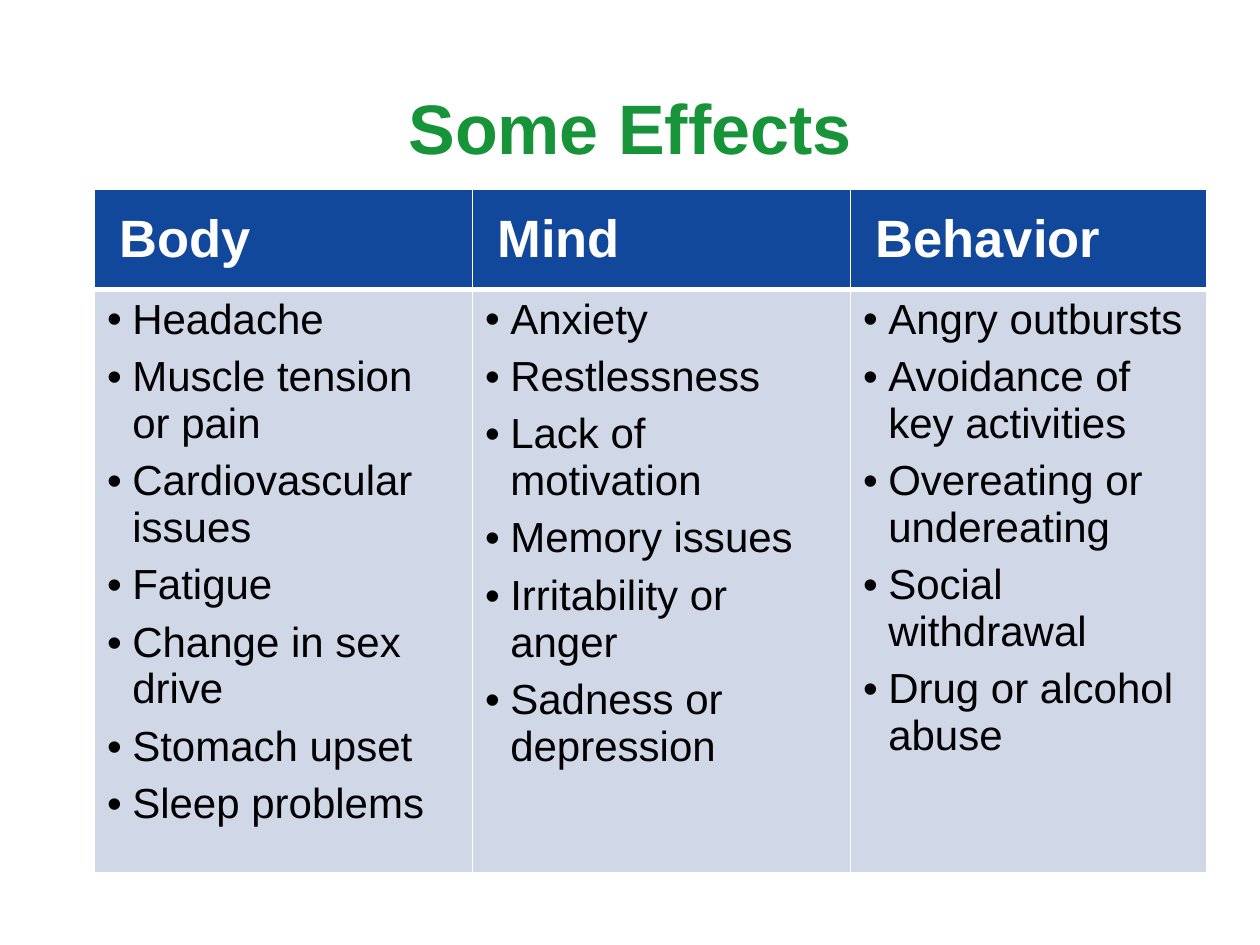
from lxml import etree
from pptx import Presentation, util as u
from pptx.dml.color import RGBColor
from pptx.enum import text
from pptx.oxml.ns import qn

GREEN = RGBColor(0x17, 0x93, 0x39)
BLUE = RGBColor(0x11, 0x48, 0x9B)
PALE = RGBColor(0xD0, 0xD8, 0xE8)
WHITE = RGBColor(0xFF, 0xFF, 0xFF)
BLACK = RGBColor(0, 0, 0)

EFFECTS = {
    "Body": ["Headache", "Muscle tension or pain", "Cardiovascular issues", "Fatigue",
             "Change in sex drive", "Stomach upset", "Sleep problems"],
    "Mind": ["Anxiety", "Restlessness", "Lack of motivation", "Memory issues",
             "Irritability or anger", "Sadness or depression"],
    "Behavior": ["Angry outbursts", "Avoidance of key activities",
                 "Overeating or undereating", "Social withdrawal",
                 "Drug or alcohol abuse"],
}


def write(p, content, size=24, color=BLACK, bold=False, font="Arial", align=None,
          bullet=False, after=None):
    """Fill one paragraph with formatted text."""
    if bullet:
        pPr = p._p.get_or_add_pPr()
        pPr.set("marL", str(u.Inches(0.2)))
        pPr.set("indent", str(u.Inches(-0.2)))
        etree.SubElement(pPr, qn("a:buFont"), typeface=font)
        etree.SubElement(pPr, qn("a:buChar"), char="•")
    if align is not None:
        p.alignment = align
    if after is not None:
        p.space_after = u.Pt(after)
    r = p.add_run()
    r.text = content
    r.font.name, r.font.size, r.font.bold = font, u.Pt(size), bold
    r.font.color.rgb = color


class Deck:
    def __init__(self, width, height):
        self.prs = Presentation()
        self.prs.slide_width, self.prs.slide_height = u.Inches(width), u.Inches(height)
        self.s = self.prs.slides.add_slide(self.prs.slide_layouts[6])

    def title(self, content, left, top, width, height):
        tf = self.s.shapes.add_textbox(*map(u.Inches, (left, top, width, height))).text_frame
        tf.word_wrap = True
        tf.vertical_anchor = text.MSO_ANCHOR.MIDDLE
        write(tf.paragraphs[0], content, size=40, color=GREEN, bold=True,
              align=text.PP_ALIGN.CENTER)

    def style_cell(self, cell, fill, **widths):
        """Set white borders, with widths in points by side, then the fill."""
        tcPr = cell._tc.get_or_add_tcPr()
        for side in "LRTB":
            ln = etree.SubElement(tcPr, qn(f"a:ln{side}"), w=str(u.Pt(widths.get(side, 1))))
            solid = etree.SubElement(ln, qn("a:solidFill"))
            etree.SubElement(solid, qn("a:srgbClr"), val=str(WHITE))
        cell.fill.solid()
        cell.fill.fore_color.rgb = fill

    def table(self, columns, left, top, widths, heights):
        box = map(u.Inches, (left, top, sum(widths), sum(heights)))
        tbl = self.s.shapes.add_table(len(heights), len(widths), *box).table
        for row, height in zip(tbl.rows, heights):
            row.height = u.Inches(height)
        for i, (heading, items) in enumerate(columns.items()):
            tbl.columns[i].width = u.Inches(widths[i])
            # Heading cell
            head, body = tbl.cell(0, i), tbl.cell(1, i)
            self.style_cell(head, BLUE, B=3)
            head.margin_left = u.Inches(0.2)
            head.vertical_anchor = text.MSO_ANCHOR.MIDDLE
            write(head.text_frame.paragraphs[0], heading, size=30, color=WHITE, bold=True)
            # Bulleted cell
            self.style_cell(body, PALE, T=3)
            tf = body.text_frame
            for n, item in enumerate(items):
                p = tf.add_paragraph() if n else tf.paragraphs[0]
                write(p, item, bullet=True, after=6)


def main():
    deck = Deck(10, 7.5)
    deck.title("Some Effects", 0, 0.38, 10, 1.25)
    deck.table(EFFECTS, 0.75, 1.5, widths=[3, 3, 2.83], heights=[0.8, 4.63])
    deck.prs.save("out.pptx")


if __name__ == "__main__":
    main()
